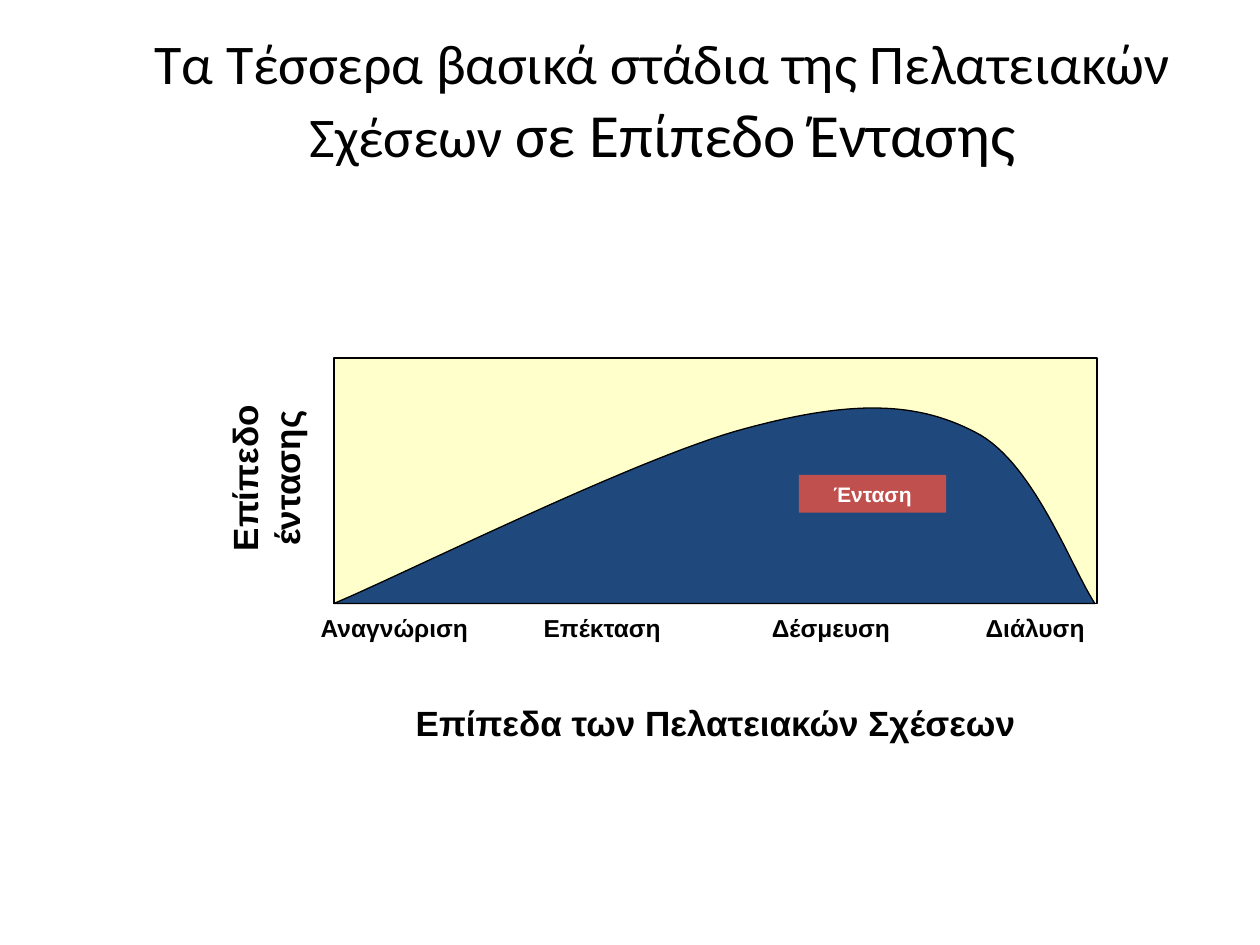
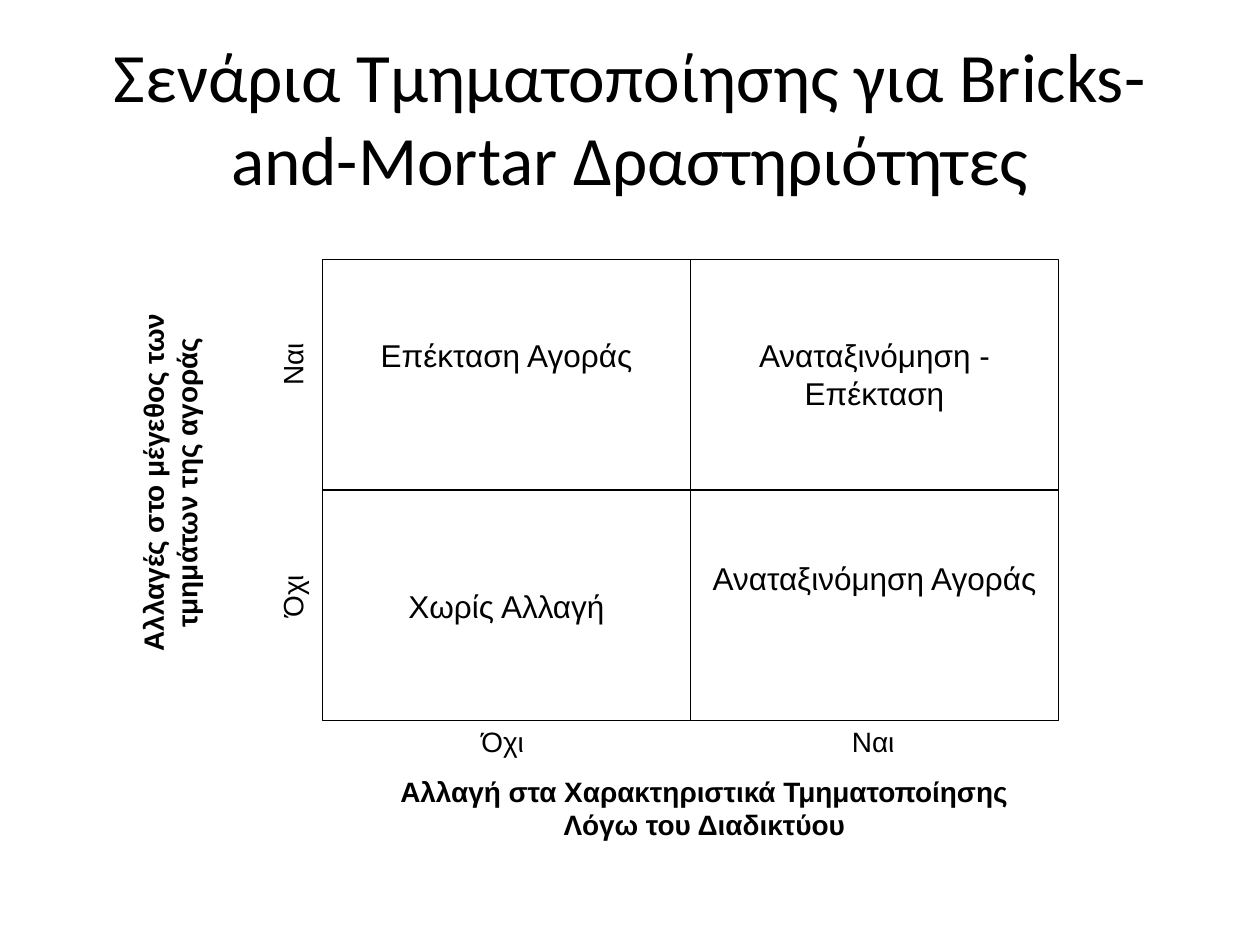
from pptx import Presentation
from pptx.dml.color import RGBColor
from pptx.enum.shapes import MSO_SHAPE
from pptx.enum.text import MSO_ANCHOR, MSO_AUTO_SIZE, PP_ALIGN
from pptx.util import Inches, Pt

RECT = MSO_SHAPE.RECTANGLE
CENTER = PP_ALIGN.CENTER
MIDDLE, TOP = MSO_ANCHOR.MIDDLE, MSO_ANCHOR.TOP
NO_FIT = MSO_AUTO_SIZE.NONE
BLACK, WHITE, CREAM, NAVY, RED = "000000", "FFFFFF", "FFFFCC", "1F497D", "C0504D"
TITLE_ONLY = 5


def write(sp, text, size, font="Arial", color=BLACK, bold=False, anchor=MIDDLE, wrap=True):
    tf = sp.text_frame
    tf.auto_size = NO_FIT
    tf.word_wrap = wrap
    tf.vertical_anchor = anchor
    p = tf.paragraphs[0]
    p.alignment = CENTER
    r = p.add_run()
    r.text = text
    r.font.size = Pt(size)
    r.font.name = font
    r.font.bold = bold
    r.font.color.rgb = RGBColor.from_string(color)


def paint(sp, fill, line=None, width=0.75):
    sp.shadow.inherit = False
    sp.fill.solid()
    sp.fill.fore_color.rgb = RGBColor.from_string(fill)
    if line:
        sp.line.color.rgb = RGBColor.from_string(line)
        sp.line.width = Pt(width)
    else:
        sp.line.fill.background()


prs = Presentation()
prs.slide_width, prs.slide_height = Inches(10), Inches(7.5)
layout = prs.slide_layouts[TITLE_ONLY]

titles = [
    ((0.52, 0.16, 9.48, 1.25), [("Τα Τέσσερα βασικά στάδια της Πελατειακών Σχέσεων ", 32),
                                ("σε Επίπεδο Έντασης", 35)]),
    ((0.5, 0.3, 9, 1.25), [("Σενάρια Τμηματοποίησης για Bricks-and-Mortar Δραστηριότητες", 39.6)]),
]
for box, runs in titles:
    s = prs.slides.add_slide(layout)
    title = s.shapes.title
    title.left, title.top, title.width, title.height = map(Inches, box)
    for text, size in runs:
        write(title, text, size, font="Calibri")
stages_slide, matrix_slide = prs.slides

# Stages of the customer relationship
s = stages_slide
plot = s.shapes.add_shape(RECT, *map(Inches, (2.65, 2.84, 6.06, 1.95)))
paint(plot, CREAM, BLACK, 1)

start = (2.65, 4.79)
curves = [
    [(3.2, 4.56), (5.08, 3.62), (5.92, 3.4)],
    [(6.77, 3.17), (7.28, 3.19), (7.74, 3.43)],
    [(8.2, 3.66), (8.5, 4.5), (8.69, 4.79)],
]
steps = 30
points = []
p0 = start
for p1, p2, p3 in curves:
    for i in range(1, steps + 1):
        t = i / steps
        u = 1 - t
        points.append(tuple(
            Inches(u**3 * a + 3 * u**2 * t * b + 3 * u * t**2 * c + t**3 * d)
            for a, b, c, d in zip(p0, p1, p2, p3)))
    p0 = p3
builder = s.shapes.build_freeform(*map(Inches, start))
builder.add_line_segments(points, close=True)
paint(builder.convert_to_shape(), NAVY, BLACK)

intensity = s.shapes.add_shape(RECT, *map(Inches, (6.34, 3.77, 1.17, 0.3)))
paint(intensity, RED)
write(intensity, "Ένταση", 12, color=WHITE, bold=True)

stages = [("Αναγνώριση", 2.44, 1.38), ("Επέκταση", 4.21, 1.14),
          ("Δέσμευση", 6.02, 1.15), ("Διάλυση", 7.72, 0.99)]
for text, left, width in stages:
    sp = s.shapes.add_textbox(*map(Inches, (left, 4.81, width, 0.34)))
    write(sp, text, 14, bold=True, wrap=False)

# Segmentation matrix
s = matrix_slide
grid_left, grid_top, cell_w, cell_h = 2.56, 2.06, 2.92, 1.83
cells = [
    [("Επέκταση Αγοράς", 2.62), ("Αναταξινόμηση - Επέκταση", 2.62)],
    [("Χωρίς Αλλαγή", 4.61), ("Αναταξινόμηση Αγοράς", 4.39)],
]
for row, entries in enumerate(cells):
    for col, (text, text_top) in enumerate(entries):
        left, top = grid_left + col * cell_w, grid_top + row * cell_h
        cell = s.shapes.add_shape(RECT, *map(Inches, (left, top, cell_w, cell_h)))
        paint(cell, WHITE, BLACK)
        sp = s.shapes.add_textbox(*map(Inches, (left, text_top, cell_w, 0.7)))
        write(sp, text, 18, anchor=TOP)

axis_labels = [
    (stages_slide, "Επίπεδο έντασης", (1.39, 3.41, 1.43, 0.77), 270, 20, True),
    (stages_slide, "Επίπεδα των Πελατειακών Σχέσεων", (2.65, 5.52, 6.06, 0.43), 0, 20, True),
    (matrix_slide, "Ναι", (1.94, 2.71, 0.76, 0.36), 270, 16, False),
    (matrix_slide, "Όχι", (1.75, 4.55, 1.14, 0.36), 270, 16, False),
    (matrix_slide, "Όχι", (3.48, 5.7, 1.02, 0.36), 0, 16, False),
    (matrix_slide, "Ναι", (6.42, 5.7, 1.02, 0.36), 0, 16, False),
    (matrix_slide, "Αλλαγή στα Χαρακτηριστικά Τμηματοποίησης Λόγω του Διαδικτύου",
     (2.77, 6.09, 5.64, 0.64), 0, 16, True),
    (matrix_slide, "Αλλαγές στο μέγεθος των τμημάτων της αγοράς",
     (-0.38, 3.51, 3.45, 0.64), 270, 16, True),
]
for s, text, box, rotation, size, bold in axis_labels:
    sp = s.shapes.add_textbox(*map(Inches, box))
    sp.rotation = rotation
    write(sp, text, size, bold=bold)

prs.save("out.pptx")
